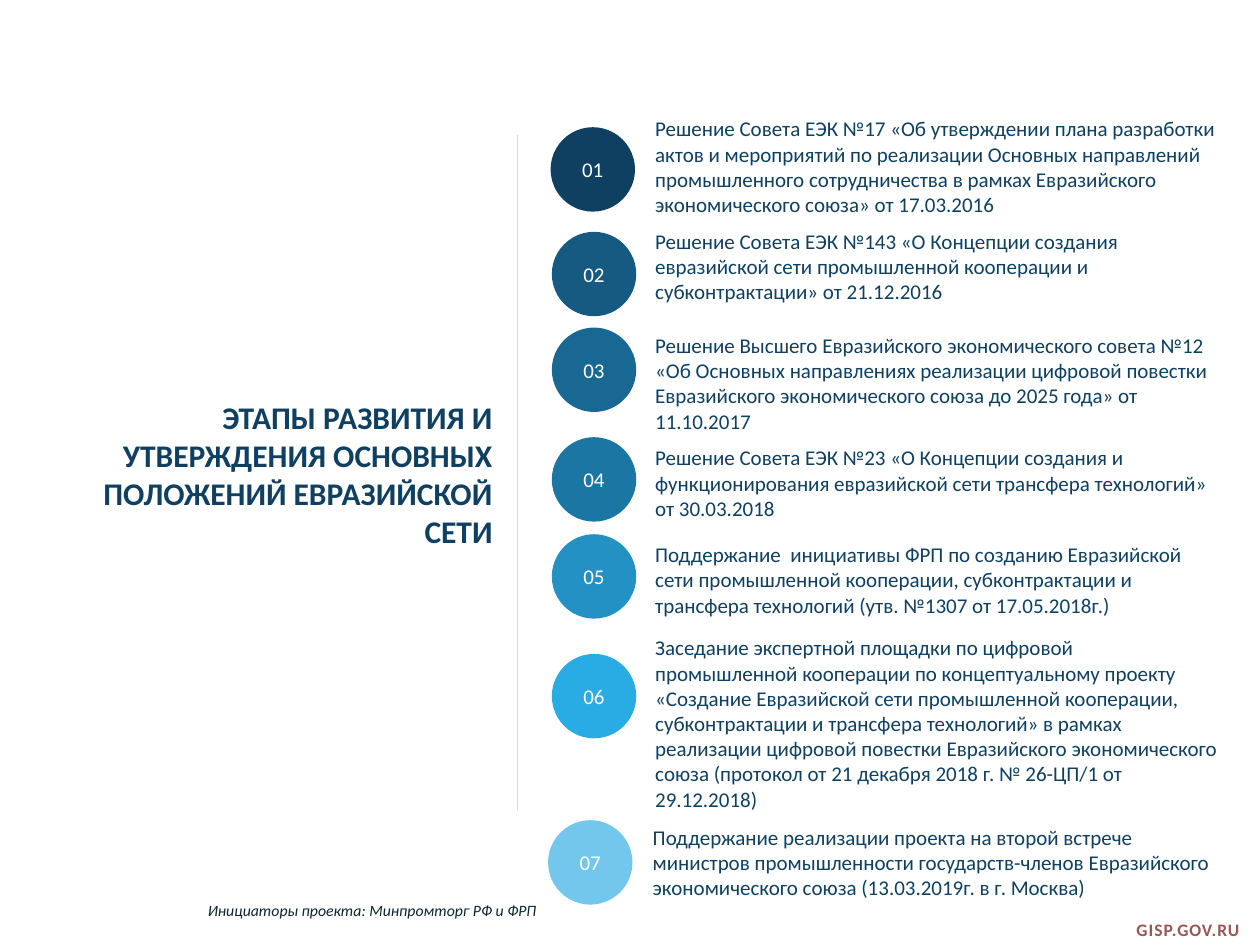
from lxml import etree
from pptx import Presentation
from pptx.dml.color import RGBColor
from pptx.enum.shapes import MSO_CONNECTOR, MSO_SHAPE
from pptx.enum.text import MSO_ANCHOR, MSO_AUTO_SIZE, PP_ALIGN
from pptx.oxml.ns import qn
from pptx.util import Inches, Pt

LEFT, CENTER, RIGHT = PP_ALIGN.LEFT, PP_ALIGN.CENTER, PP_ALIGN.RIGHT
TOP, MIDDLE = MSO_ANCHOR.TOP, MSO_ANCHOR.MIDDLE
FIXED_SIZE = MSO_AUTO_SIZE.NONE
OVAL, STRAIGHT = MSO_SHAPE.OVAL, MSO_CONNECTOR.STRAIGHT
TITLE_ONLY = 5
COLUMNS, ROWS = 100, 75
NAVY, WHITE, RULE_GREY = "0F4061", "FFFFFF", "D9D9D9"
DISC = 6.7
DISC_LEFT, TEXT_LEFT, TEXT_WIDTH = 43.8, 51.1, 46.5

# disc colour, disc (left, top), text (left, top, width, height), wording
STAGES = [
    (NAVY, (43.7, 10.1), (TEXT_LEFT, 8.8, 48.9, 9),
     "Решение Совета ЕЭК №17 «Об утверждении плана разработки актов и мероприятий "
     "по реализации Основных направлений промышленного сотрудничества в рамках "
     "Евразийского экономического союза» от 17.03.2016"),
    ("165A82", (DISC_LEFT, 18.4), (TEXT_LEFT, 17.7, TEXT_WIDTH, 6.9),
     "Решение Совета ЕЭК №143 «О Концепции создания евразийской сети промышленной "
     "кооперации и субконтрактации» от 21.12.2016"),
    ("196893", (DISC_LEFT, 26), (TEXT_LEFT, 26, TEXT_WIDTH, 9),
     "Решение Высшего Евразийского экономического совета №12 «Об Основных "
     "направлениях реализации цифровой повестки Евразийского экономического союза "
     "до 2025 года» от 11.10.2017"),
    ("1C76A3", (DISC_LEFT, 34.7), (TEXT_LEFT, 34.9, TEXT_WIDTH, 6.9),
     "Решение Совета ЕЭК №23 «О Концепции создания и функционирования евразийской "
     "сети трансфера технологий» от 30.03.2018"),
    ("2391C4", (DISC_LEFT, 42.4), (TEXT_LEFT, 42.6, TEXT_WIDTH, 6.9),
     "Поддержание  инициативы ФРП по созданию Евразийской сети промышленной "
     "кооперации, субконтрактации и трансфера технологий (утв. №1307 от "
     "17.05.2018г.)"),
    ("29ACE4", (DISC_LEFT, 51.9), (TEXT_LEFT, 50, TEXT_WIDTH, 15),
     "Заседание экспертной площадки по цифровой промышленной кооперации по "
     "концептуальному проекту «Создание Евразийской сети промышленной кооперации, "
     "субконтрактации и трансфера технологий» в рамках реализации цифровой повестки "
     "Евразийского экономического союза (протокол от 21 декабря 2018 г. № 26-ЦП/1 "
     "от 29.12.2018)"),
    ("73C7ED", (43.5, 65.1), (50.9, 65, TEXT_WIDTH, 6.9),
     "Поддержание реализации проекта на второй встрече министров промышленности "
     "государств-членов Евразийского экономического союза (13.03.2019г. в г. Москва)"),
]


def rgb(value):
    return RGBColor.from_string(value)


class SlideBuilder:
    FONT = "Calibri"

    def __init__(self):
        self.deck = Presentation()
        self.deck.slide_width, self.deck.slide_height = Inches(10), Inches(7.5)
        self.slide = self.deck.slides.add_slide(self.deck.slide_layouts[TITLE_ONLY])

    def grid(self, left, top, *size):
        """Turn column and row counts into slide lengths."""
        units = (self.deck.slide_width / COLUMNS, self.deck.slide_height / ROWS) * 2
        return [round(n * unit) for n, unit in zip((left, top, *size), units)]

    def set_wording(self, shape, wording, align=LEFT, anchor=TOP, wrap=True,
                    color=NAVY, **font):
        frame = shape.text_frame
        layout = {"auto_size": FIXED_SIZE, "word_wrap": wrap,
                  "vertical_anchor": anchor,
                  "margin_left": Inches(0.09), "margin_right": Inches(0.09),
                  "margin_top": Inches(0.04), "margin_bottom": Inches(0.04)}
        for key, value in layout.items():
            setattr(frame, key, value)
        paragraph = frame.paragraphs[0]
        paragraph.alignment = align
        run = paragraph.add_run()
        run.text = wording
        for key, value in {"name": self.FONT, "size": Pt(12), **font}.items():
            setattr(run.font, key, value)
        run.font.color.rgb = rgb(color)
        return run

    def title(self, box, wording, **style):
        heading = self.slide.shapes.title
        heading.left, heading.top, heading.width, heading.height = self.grid(*box)
        self.set_wording(heading, wording, **style)

    def text(self, box, wording, **style):
        return self.set_wording(self.slide.shapes.add_textbox(*self.grid(*box)),
                                wording, **style)

    def disc(self, place, number, fill):
        disc = self.slide.shapes.add_shape(OVAL, *self.grid(*place, DISC, DISC))
        disc.shadow.inherit = False
        disc.fill.solid()
        disc.fill.fore_color.rgb = rgb(fill)
        disc.line.fill.background()
        self.set_wording(disc, number, align=CENTER, anchor=MIDDLE, color=WHITE)

    def rule(self, start, end):
        rule = self.slide.shapes.add_connector(
            STRAIGHT, *self.grid(*start), *self.grid(*end))
        rule.line.color.rgb = rgb(RULE_GREY)
        rule.line.width = Pt(0.5)
        etree.SubElement(rule._element.spPr, qn("a:effectLst"))


def main():
    page = SlideBuilder()
    site = page.text((89.3, 72.5, 10.7, 2.7), "GISP.GOV.RU", wrap=False,
                     color="9A5555", size=Pt(10), bold=True)
    site.font._element.set("spc", "60")
    page.title((3.1, 31.2, 36.9, 13),
               "ЭТАПЫ РАЗВИТИЯ И УТВЕРЖДЕНИЯ ОСНОВНЫХ ПОЛОЖЕНИЙ ЕВРАЗИЙСКОЙ СЕТИ",
               align=RIGHT, size=Pt(18), bold=True)
    page.rule((41.1, 64.3), (41.1, 10.7))
    for number, (fill, place, box, wording) in enumerate(STAGES, 1):
        page.disc(place, f"{number:02}", fill)
        page.text(box, wording)
    page.text((15.6, 71.1, 28.4, 2.4), "Инициаторы проекта: Минпромторг РФ и ФРП",
              wrap=False, color="0C2533", size=Pt(9), italic=True)
    page.deck.save("out.pptx")


if __name__ == "__main__":
    main()
